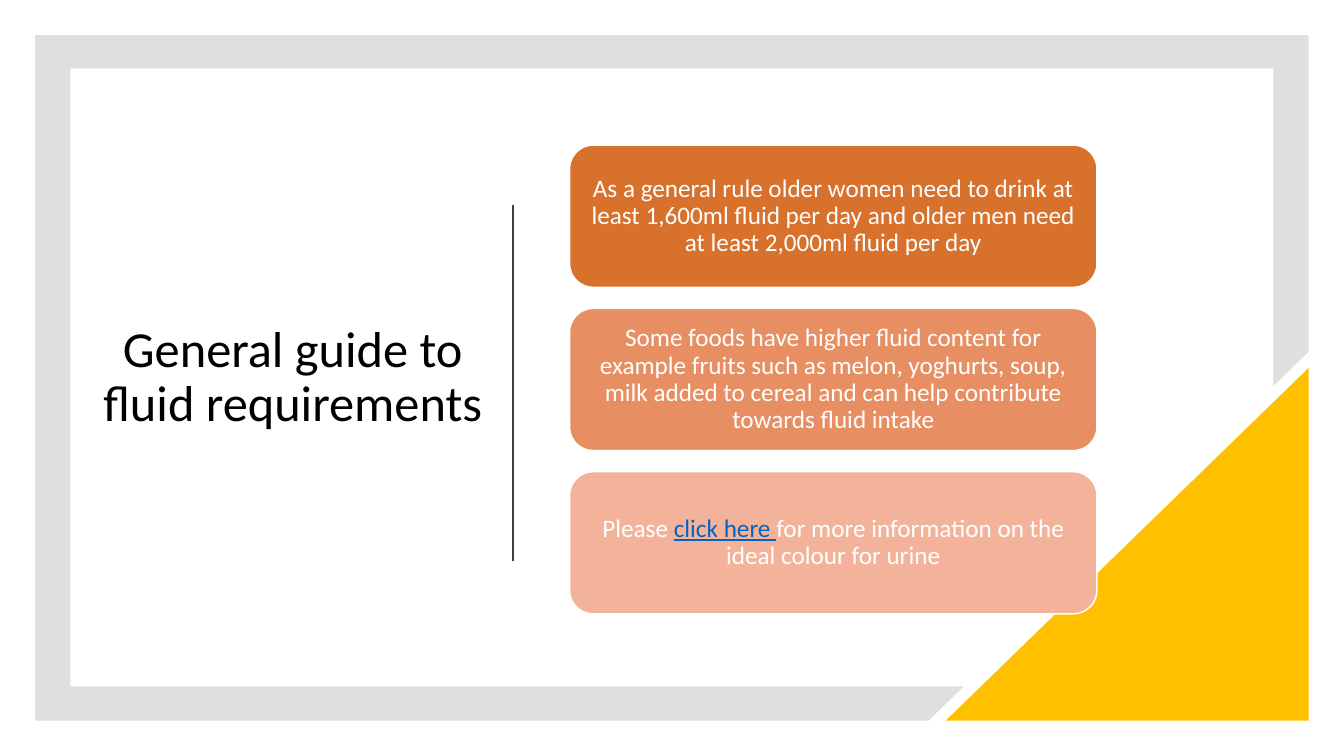
from pptx import Presentation
from pptx.dml.color import RGBColor
from pptx.enum.shapes import MSO_CONNECTOR as CONN, MSO_SHAPE as SHAPE
from pptx.enum.text import MSO_ANCHOR as ANCHOR, PP_ALIGN as ALIGN
from pptx.oxml.ns import qn
from pptx.util import Inches, Pt
from lxml.etree import SubElement

COLORS = {
    "frame": "DFDFDF", "corner": "FFC000", "title": "000000",
    "divider": "404040", "white": "FFFFFF", "link": "0563C1",
    "card1": "D7712C", "card2": "E78F62", "card3": "F3B39B",
}
FRAME = [
    (0.35, 0.35), (12.98, 0.35), (12.98, 3.49), (12.63, 3.83), (12.63, 0.68),
    (0.7, 0.68), (0.7, 6.81), (9.56, 6.81), (9.21, 7.15), (0.35, 7.15),
]
CARDS = [
    ("card1", [("As a general rule older women need to drink at least 1,600ml "
                "fluid per day and older men need at least 2,000ml fluid per day", "white")]),
    ("card2", [("Some foods have higher fluid content for example fruits such as "
                "melon, yoghurts, soup, milk added to cereal and can help "
                "contribute towards fluid intake", "white")]),
    ("card3", [("Please ", "white"), ("click here ", "link"),
               ("for more information on the ideal colour for urine", "white")]),
]


def rgb(name):
    return RGBColor.from_string(COLORS[name])


def paint(sp, fill, line=None):
    sp.shadow.inherit = False
    sp.fill.solid()
    sp.fill.fore_color.rgb = rgb(fill)
    if line:
        sp.line.color.rgb = rgb(line)
        sp.line.width = Pt(1)
    else:
        sp.line.fill.background()


def write(sp, runs, size):
    tf = sp.text_frame
    tf.word_wrap = True
    tf.vertical_anchor = ANCHOR.MIDDLE
    p = tf.paragraphs[0]
    p.alignment = ALIGN.CENTER
    p.line_spacing = 0.9
    for text, color in runs:
        r = p.add_run()
        r.text = text
        r.font.name = "Calibri"
        r.font.size = Pt(size)
        r.font.color.rgb = rgb(color)
        if color == "link":
            r.font.underline = True
    return tf


def add_frame(s):
    points = [(Inches(x), Inches(y)) for x, y in FRAME]
    fb = s.shapes.build_freeform(*points[0])
    fb.add_line_segments(points[1:], close=True)
    paint(fb.convert_to_shape(), "frame")


def add_corner(s):
    sp = s.shapes.add_shape(SHAPE.RIGHT_TRIANGLE, Inches(9.38), Inches(3.65),
                            Inches(3.6), Inches(3.5))
    sp._element.spPr.find(qn("a:xfrm")).set("flipH", "1")
    paint(sp, "corner")


def add_title(s, text):
    sp = s.shapes.add_textbox(Inches(0.84), Inches(1.3), Inches(4.13), Inches(4.9))
    write(sp, [(text, "title")], 36)


def add_divider(s):
    line = s.shapes.add_connector(CONN.STRAIGHT, Inches(5.09), Inches(2.03),
                                  Inches(5.09), Inches(5.57))
    line.line.color.rgb = rgb("divider")
    line.line.width = Pt(1.5)
    SubElement(line._element.spPr, qn("a:effectLst"))


def add_card(s, top, fill, runs):
    sp = s.shapes.add_shape(SHAPE.ROUNDED_RECTANGLE, Inches(5.65), Inches(top),
                            Inches(5.23), Inches(1.41))
    paint(sp, fill, "white")
    tf = write(sp, runs, 18)
    tf.margin_left = tf.margin_right = Inches(0.07)
    tf.margin_top = tf.margin_bottom = Inches(0.07)


def main():
    """Build the fluid requirements slide."""
    prs = Presentation()
    prs.slide_width, prs.slide_height = Inches(13.33), Inches(7.5)
    s = prs.slides.add_slide(prs.slide_layouts[6])
    add_frame(s)
    add_corner(s)
    add_title(s, "General guide to fluid requirements")
    add_divider(s)
    for i, (fill, runs) in enumerate(CARDS):
        add_card(s, 1.44 + i * 1.62, fill, runs)
    prs.save("out.pptx")


if __name__ == "__main__":
    main()
